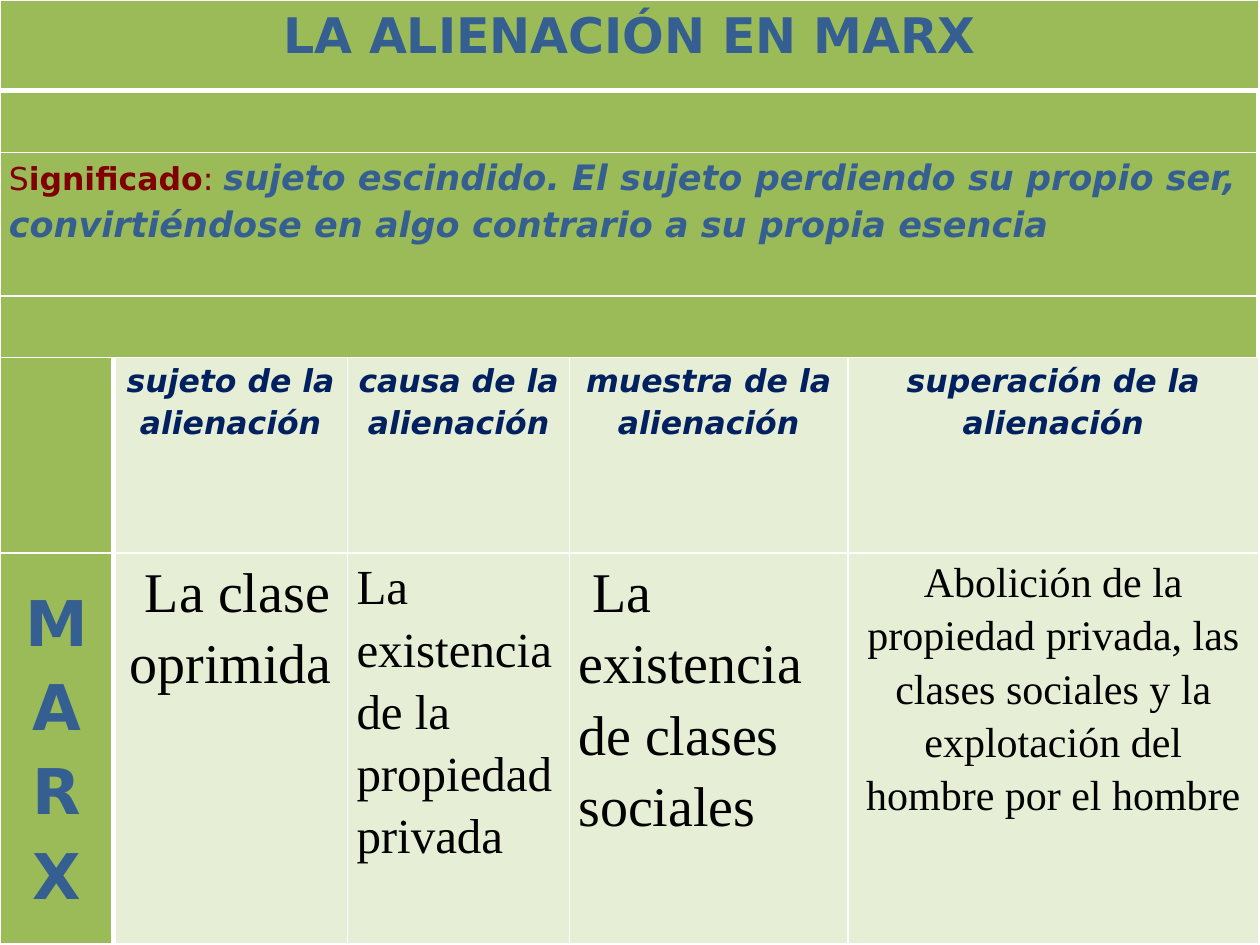
from dataclasses import dataclass

from lxml.etree import SubElement
from pptx import Presentation
from pptx.dml.color import RGBColor
from pptx.enum.text import PP_ALIGN as Align
from pptx.oxml.ns import qn
from pptx.table import Table, _Cell as Cell
from pptx.util import Inches, Pt


@dataclass(frozen=True)
class Theme:
    green: str = "9BBB59"
    pale: str = "E6EED5"
    line: str = "FFFFFF"
    blue: str = "365F91"
    navy: str = "002060"
    maroon: str = "800000"
    black: str = "000000"
    sans: str = "DejaVu Sans"
    serif: str = "Times New Roman"
    label: int = 18
    quote: int = 20
    body: int = 24
    large: int = 28
    answer: int = 32
    side: int = 36
    thin: int = 1
    thick: int = 3


THEME = Theme()

# Shares of the slide's width and height, in percent
COLUMNS = (9, 18.6, 17.6, 22.1, 32.6)
ROWS = (9.6, 6.53, 15.2, 6.53, 20.67, 41.33)
BANNER_ROWS = 4
HEADING_ROW, ANSWER_ROW = 4, 5


@dataclass(frozen=True)
class Run:
    text: str
    size: int
    color: str
    bold: bool = True
    italic: bool = False
    font: str = THEME.sans


@dataclass(frozen=True)
class Entry:
    row: int
    column: int
    runs: tuple[Run, ...]
    align: Align = Align.CENTER
    after: float = 1
    indent: float = 0
    top: float = 0


def heading(column: int, text: str) -> Entry:
    return Entry(HEADING_ROW, column, (Run(text, THEME.label, THEME.navy, italic=True),))


def answer(column: int, text: str, size: int, align: Align = Align.CENTER, indent: float = 0) -> Entry:
    run = Run(text, size, THEME.black, bold=False, font=THEME.serif)
    return Entry(ANSWER_ROW, column, (run,), align, indent=indent)


ENTRIES = (
    Entry(0, 0, (Run("LA ALIENACIÓN EN MARX", THEME.large, THEME.blue),), after=6),
    Entry(2, 0, (
        Run("S", THEME.label, THEME.maroon, bold=False),
        Run("ignificado", THEME.label, THEME.maroon),
        Run(": ", THEME.label, THEME.maroon, bold=False),
        Run("sujeto escindido. El sujeto perdiendo su propio ser, "
            "convirtiéndose en algo contrario a su propia esencia",
            THEME.quote, THEME.blue, italic=True),
    ), Align.LEFT, after=2.5),
    heading(1, "sujeto de la alienación"),
    heading(2, "causa de la alienación"),
    heading(3, "muestra de la alienación"),
    heading(4, "superación de la alienación"),
    Entry(ANSWER_ROW, 0, (Run("MARX", THEME.side, THEME.blue),), after=0, top=0.19),
    answer(1, "La clase oprimida", THEME.answer, indent=8),
    answer(2, "La existencia de la propiedad privada", THEME.large, Align.LEFT),
    answer(3, "La existencia de clases sociales", THEME.answer, Align.LEFT, indent=8),
    answer(4, "Abolición de la propiedad privada, las clases sociales "
              "y la explotación del hombre por el hombre", THEME.body),
)


def add_border(cell: Cell, side: str, width: float) -> None:
    line = SubElement(cell._tc.get_or_add_tcPr(), qn(f"a:ln{side}"), w=str(Pt(width)))
    fill = SubElement(line, qn("a:solidFill"))
    SubElement(fill, qn("a:srgbClr"), val=THEME.line)


def style_cell(cell: Cell, row: int, column: int) -> None:
    """Thick rules lie under the title and right of the green part."""
    thick_sides = {
        "L": row >= BANNER_ROWS and column == 1,
        "R": row > 0 and column == 0,
        "T": row == 1,
        "B": row == 0,
    }
    for side, is_thick in thick_sides.items():
        add_border(cell, side, THEME.thick if is_thick else THEME.thin)
    is_green = row < BANNER_ROWS or column == 0
    cell.fill.solid()
    cell.fill.fore_color.rgb = RGBColor.from_string(THEME.green if is_green else THEME.pale)
    cell.margin_left = cell.margin_right = Inches(0.07)
    cell.margin_top = cell.margin_bottom = 0


def write_entry(table: Table, entry: Entry) -> None:
    cell = table.cell(entry.row, entry.column)
    cell.margin_top = Inches(entry.top)
    paragraph = cell.text_frame.paragraphs[0]
    paragraph.alignment = entry.align
    paragraph.line_spacing = 1.15
    paragraph.space_after = Pt(entry.after)
    if entry.indent:
        paragraph._p.get_or_add_pPr().set("indent", str(Pt(entry.indent)))
    for item in entry.runs:
        run = paragraph.add_run()
        run.text = item.text
        run.font.name = item.font
        run.font.size = Pt(item.size)
        run.font.bold = item.bold
        run.font.italic = item.italic
        run.font.color.rgb = RGBColor.from_string(item.color)


def main() -> None:
    presentation = Presentation()
    presentation.slide_width, presentation.slide_height = Inches(10), Inches(7.5)
    width, height = presentation.slide_width, presentation.slide_height
    slide = presentation.slides.add_slide(presentation.slide_layouts[6])

    # Grid
    table = slide.shapes.add_table(len(ROWS), len(COLUMNS), 0, 0, width, height).table
    for column, share in zip(table.columns, COLUMNS):
        column.width = round(width * share / 100)
    for row, share in zip(table.rows, ROWS):
        row.height = round(height * share / 100)
    for row in range(len(ROWS)):
        for column in range(len(COLUMNS)):
            style_cell(table.cell(row, column), row, column)

    # Full-width bands
    for row in range(BANNER_ROWS):
        table.cell(row, 0).merge(table.cell(row, len(COLUMNS) - 1))

    # Wording
    for entry in ENTRIES:
        write_entry(table, entry)

    presentation.save("out.pptx")


if __name__ == "__main__":
    main()
